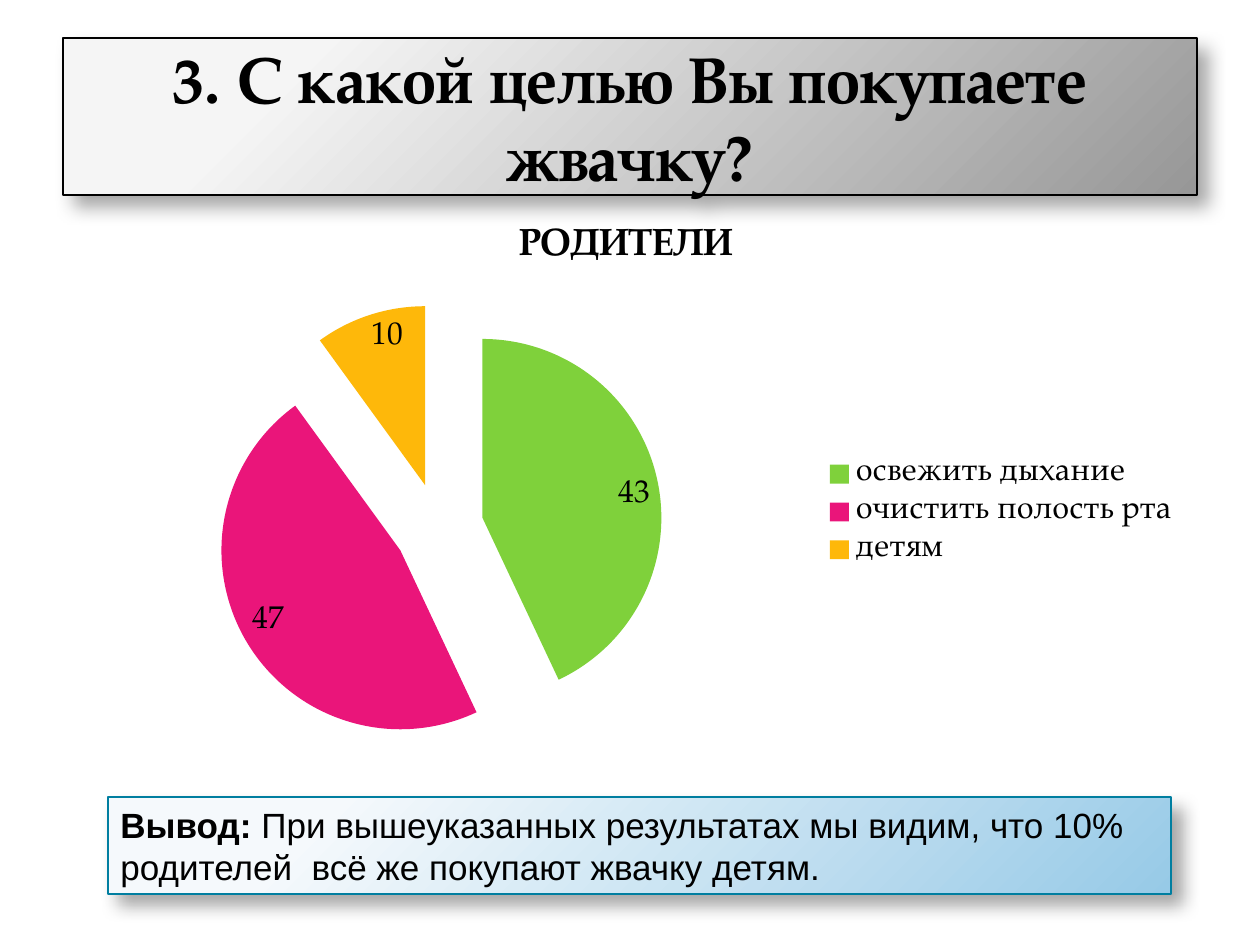
"""Builds a survey slide with a banner, an exploded pie chart and a conclusion."""
from lxml import etree
from pptx import Presentation, util as u
from pptx.chart import data as chart_data
from pptx.dml.color import RGBColor
from pptx.enum import chart as ch, shapes, text
from pptx.oxml import parse_xml
from pptx.oxml.ns import nsdecls, qn

COLOURS = {
    "ink": "000000", "silver": "F5F5F5", "grey": "979797",
    "ice": "F5F9FC", "sky": "97CAE7", "teal": "007EA0",
    "green": "7FD13B", "pink": "EA157A", "amber": "FEB80A",
}
SERIF, SANS = "TeX Gyre Pagella", "Arial"


def rgb(name):
    return RGBColor.from_string(COLOURS[name])


class SurveySlide:
    """Holds the presentation, its slide and the shared style."""

    SCALE = 914400 / 126

    def __init__(self, width, height):
        self.deck = Presentation()
        self.deck.slide_width, self.deck.slide_height = self.emu(width, height)
        self.slide = self.deck.slides.add_slide(self.deck.slide_layouts[6])

    def emu(self, *lengths):
        return [u.Emu(round(length * self.SCALE)) for length in lengths]

    def style(self, font, size, face, bold=False):
        font.size, font.name, font.bold = u.Pt(size), face, bold
        font.color.rgb = rgb("ink")

    def panel(self, box, shades, border, runs, size, face, align):
        panel = self.slide.shapes.add_shape(shapes.MSO_SHAPE.RECTANGLE, *self.emu(*box))
        panel.line.color.rgb, panel.line.width = rgb(border), u.Pt(0.75)
        self.shade(panel, shades)
        self.cast_shadow(panel)
        frame = panel.text_frame
        frame.word_wrap = True
        frame.vertical_anchor = text.MSO_ANCHOR.MIDDLE
        paragraph = frame.paragraphs[0]
        paragraph.alignment = align
        for words, bold in runs:
            run = paragraph.add_run()
            run.text = words
            self.style(run.font, size, face, bold)

    def shade(self, panel, shades):
        panel.fill.gradient()
        for stop, position, colour in zip(panel.fill.gradient_stops, (0.2, 1), shades):
            stop.position, stop.color.rgb = position, rgb(colour)
        gradient = panel.element.spPr.find(qn("a:gradFill"))
        gradient.replace(gradient.find(qn("a:lin")), parse_xml(
            f'<a:path {nsdecls("a")} path="circle"><a:fillToRect l="-15000" t="-15000" '
            'r="115000" b="115000"/></a:path>'))

    def cast_shadow(self, panel):
        panel.shadow.inherit = False
        panel.element.spPr.find(qn("a:effectLst")).append(parse_xml(
            f'<a:outerShdw {nsdecls("a")} blurRad="130000" dist="101600" dir="2700000" '
            f'algn="tl" rotWithShape="0"><a:srgbClr val="{COLOURS["ink"]}">'
            '<a:alpha val="35000"/></a:srgbClr></a:outerShdw>'))

    def pie(self, box, title, slices, layout, explosion):
        answers = chart_data.CategoryChartData()
        answers.categories = [answer for answer, _, _ in slices]
        answers.add_series(title, [share for _, share, _ in slices])
        chart = self.slide.shapes.add_chart(
            ch.XL_CHART_TYPE.PIE, *self.emu(*box), answers).chart
        self.style(chart.font, 18, SERIF)
        chart.has_title = True
        heading = chart.chart_title.text_frame.paragraphs[0].add_run()
        heading.text = title
        self.style(heading.font, 21.6, SERIF, True)
        chart.has_legend = True
        chart.legend.position = ch.XL_LEGEND_POSITION.RIGHT
        chart.legend.include_in_layout = False

        plot = chart.plots[0]
        plot.vary_by_categories = True
        plot.has_data_labels = True
        plot.data_labels.show_value = True
        plot.data_labels.show_percentage = False
        plot.data_labels.position = ch.XL_LABEL_POSITION.INSIDE_END
        series = plot.series[0]
        exploded = etree.Element(qn("c:explosion"), val=str(explosion))
        series._element.find(qn("c:tx")).addnext(exploded)
        for index, (_, _, colour) in enumerate(slices):
            fill = series.points[index].format.fill
            fill.solid()
            fill.fore_color.rgb = rgb(colour)
        self.place_plot(chart, layout)

    def place_plot(self, chart, layout):
        area = chart._chartSpace.chart.plotArea
        for old in area.findall(qn("c:layout")):
            area.remove(old)
        modes = '<c:layoutTarget val="inner"/><c:xMode val="edge"/><c:yMode val="edge"/>'
        sides = "".join(f'<c:{side} val="{part}"/>' for side, part in zip("xywh", layout))
        area.insert(0, parse_xml(
            f'<c:layout {nsdecls("c")}><c:manualLayout>{modes}{sides}'
            '</c:manualLayout></c:layout>'))


def main():
    survey = SurveySlide(1260, 945)
    survey.panel((63, 38, 1134, 157), ("silver", "grey"), "ink",
                 [("3. С какой целью Вы покупаете жвачку?", True)],
                 36.9, SERIF, text.PP_ALIGN.CENTER)
    survey.pie((59, 197, 1134, 630), "РОДИТЕЛИ",
               [("освежить дыхание", 43, "green"),
                ("очистить полость рта", 47, "pink"),
                ("детям", 10, "amber")],
               (0.05, 0.17, 0.57, 0.71), 25)
    survey.panel((108, 797, 1063, 97), ("ice", "sky"), "teal",
                 [("Вывод:", True),
                  (" При вышеуказанных результатах мы видим, что 10% "
                   "родителей  всё же покупают жвачку детям.", False)],
                 20, SANS, text.PP_ALIGN.LEFT)
    survey.deck.save("out.pptx")


if __name__ == "__main__":
    main()
